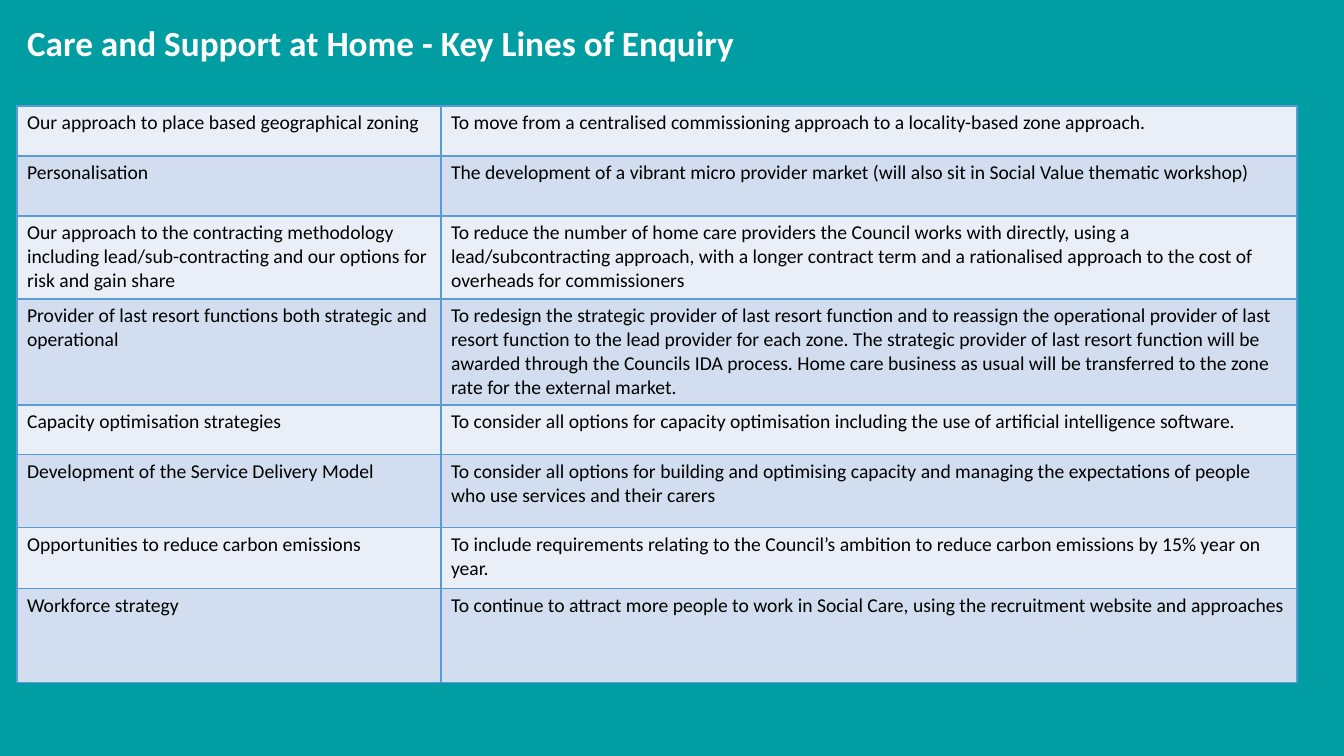
from lxml.etree import SubElement
from pptx import Presentation
from pptx.dml.color import RGBColor
from pptx.enum.shapes import MSO_SHAPE
from pptx.enum.text import MSO_ANCHOR, PP_ALIGN
from pptx.oxml import parse_xml
from pptx.oxml.ns import nsdecls, qn
from pptx.util import Pt

PX = 914400 / 100.8
TEAL = RGBColor(0x00, 0x9D, 0xA3)
WHITE = RGBColor(0xFF, 0xFF, 0xFF)
BLACK = RGBColor(0x00, 0x00, 0x00)
PALE = RGBColor(0xEA, 0xEF, 0xF7)
BLUE = RGBColor(0xD2, 0xDE, 0xEF)
BORDER = RGBColor(0x5B, 0x9B, 0xD5)

TITLE_FONT = {"name": "Calibri", "size": Pt(25.2), "bold": True}
CELL_FONT = {"name": "Calibri", "size": Pt(14), "bold": False}

TITLE = "Care and Support at Home - Key Lines of Enquiry"
COL_WIDTHS = (424, 856)
# Row height, line of enquiry, aim
ENQUIRIES = [
    (50, "Our approach to place based geographical zoning",
     "To move from a centralised commissioning approach to a locality-based zone approach."),
    (60, "Personalisation",
     "The development of a vibrant micro provider market (will also sit in Social Value "
     "thematic workshop)"),
    (83, "Our approach to the contracting methodology including lead/sub-contracting and our "
     "options for risk and gain share",
     "To reduce the number of home care providers the Council works with directly, using a "
     "lead/subcontracting approach, with a longer contract term and a rationalised approach "
     "to the cost of overheads for commissioners"),
    (106, "Provider of last resort functions both strategic and operational",
     "To redesign the strategic provider of last resort function and to reassign the "
     "operational provider of last resort function to the lead provider for each zone. The "
     "strategic provider of last resort function will be awarded through the Councils IDA "
     "process. Home care business as usual will be transferred to the zone rate for the "
     "external market."),
    (50, "Capacity optimisation strategies",
     "To consider all options for capacity optimisation including the use of artificial "
     "intelligence software."),
    (73, "Development of the Service Delivery Model",
     "To consider all options for building and optimising capacity and managing the "
     "expectations of people who use services and their carers"),
    (61, "Opportunities to reduce carbon emissions",
     "To include requirements relating to the Council’s ambition to reduce carbon emissions "
     "by 15% year on year."),
    (94, "Workforce strategy",
     "To continue to attract more people to work in Social Care, using the recruitment "
     "website and approaches"),
]


def px(n):
    return round(n * PX)


def format_font(font, values, color):
    for name, value in values.items():
        setattr(font, name, value)
    font.color.rgb = color


def add_backdrop(slide, x, y, w, h):
    sp = slide.shapes.add_shape(MSO_SHAPE.RECTANGLE, px(x), px(y), px(w), px(h))
    sp.shadow.inherit = False
    sp.fill.solid()
    sp.fill.fore_color.rgb = TEAL
    sp.line.fill.background()
    # Send behind the title
    slide.shapes._spTree.insert(2, sp._element)


def place_title(slide, x, y, w, h):
    sp = slide.shapes.title
    sp.left, sp.top, sp.width, sp.height = px(x), px(y), px(w), px(h)
    tf = sp.text_frame
    tf.word_wrap = True
    tf.vertical_anchor = MSO_ANCHOR.MIDDLE
    tf.margin_top = tf.margin_bottom = 0
    p = tf.paragraphs[0]
    p.alignment = PP_ALIGN.LEFT
    p.line_spacing = 0.9
    r = p.add_run()
    r.text = TITLE
    format_font(r.font, TITLE_FONT, WHITE)


def set_borders(cell):
    tcPr = cell._tc.get_or_add_tcPr()
    for i, side in enumerate(("lnL", "lnR", "lnT", "lnB")):
        ln = parse_xml(f'<a:{side} {nsdecls("a")} w="{Pt(1)}"/>')
        fill = SubElement(ln, qn("a:solidFill"))
        SubElement(fill, qn("a:srgbClr"), val=str(BORDER))
        tcPr.insert(i, ln)


def add_enquiry_table(slide, x, y):
    w, h = sum(COL_WIDTHS), sum(row[0] for row in ENQUIRIES)
    table = slide.shapes.add_table(len(ENQUIRIES), len(COL_WIDTHS),
                                   px(x), px(y), px(w), px(h)).table
    table.first_row = table.horz_banding = False
    for col, width in zip(table.columns, COL_WIDTHS):
        col.width = px(width)
    for i, (height, *texts) in enumerate(ENQUIRIES):
        table.rows[i].height = px(height)
        for j, text in enumerate(texts):
            cell = table.cell(i, j)
            cell.fill.solid()
            cell.fill.fore_color.rgb = BLUE if i % 2 else PALE
            set_borders(cell)
            r = cell.text_frame.paragraphs[0].add_run()
            r.text = text
            format_font(r.font, CELL_FONT, BLACK)


def build_enquiry_slide(prs):
    slide = prs.slides.add_slide(prs.slide_layouts[5])
    add_backdrop(slide, -3, 0, 1347, 756)
    place_title(slide, 17, 24, 1009, 43)
    add_enquiry_table(slide, 17, 106)


def main():
    prs = Presentation()
    prs.slide_width, prs.slide_height = px(1344), px(756)
    build_enquiry_slide(prs)
    prs.save("out.pptx")


if __name__ == "__main__":
    main()
